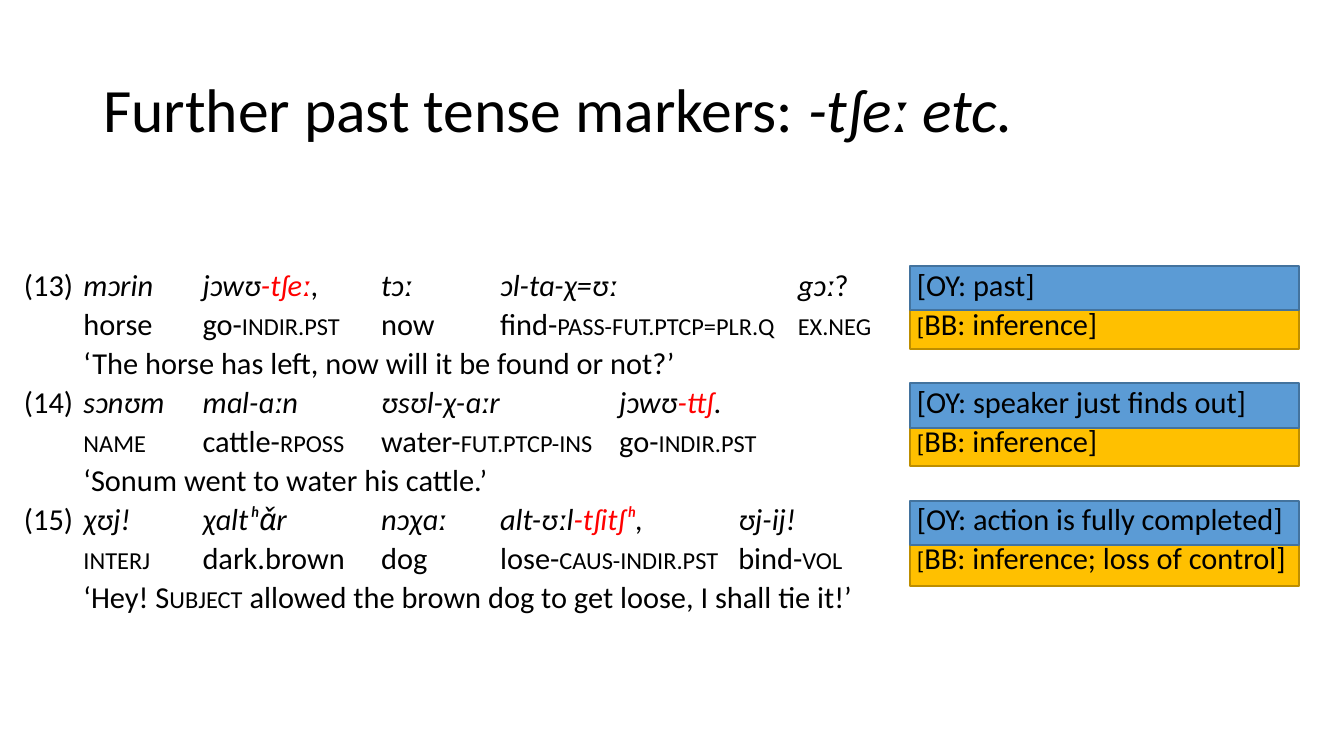
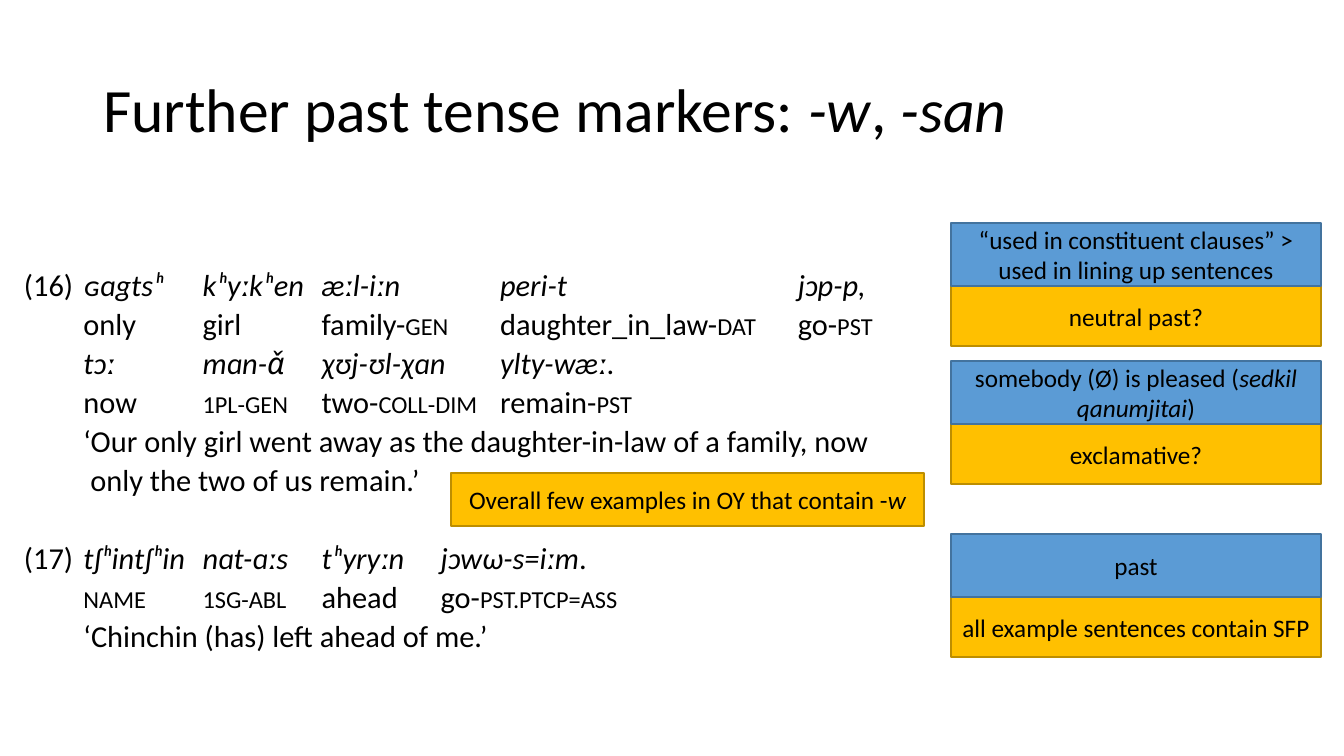
from itertools import groupby

from lxml import etree
from pptx import Presentation
from pptx import util as u
from pptx.dml.color import RGBColor
from pptx.enum import shapes, text
from pptx.oxml import ns

PX = 12192000 / 1344
TAB_STEP = 540000
LINE_PITCH = 28.2
COLORS = {"text": "000000", "marker": "FF0000", "background": "FFFFFF",
          "oy": "5B9BD5", "oy_line": "43739E", "bb": "FFC000", "bb_line": "BD8E00"}
TOGGLES = {"/": "italic", "^": "small", "~": "marker"}
TITLE_BOX = (93, 40, 1159, 146)
TITLE = {"frame": {"vertical_anchor": text.MSO_ANCHOR.MIDDLE, "word_wrap": True},
         "paragraph": {"alignment": text.PP_ALIGN.LEFT, "line_spacing": 0.9},
         "font": {"size": u.Pt(44), "name": "Calibri"}}
EXAMPLE = {"frame": {"vertical_anchor": text.MSO_ANCHOR.TOP, "word_wrap": True},
           "paragraph": {"line_spacing": 0.7, "space_before": u.Pt(9.6)},
           "font": {"size": u.Pt(21.7), "name": "Calibri"}}
NOTE = {"frame": {"vertical_anchor": text.MSO_ANCHOR.MIDDLE, "word_wrap": True},
        "paragraph": {"alignment": text.PP_ALIGN.CENTER},
        "font": {"size": u.Pt(18), "name": "Calibri"}}

PAST_EXAMPLES = [
    {"stops": (1, 3, 6, 8, 13, 15), "lines": [
        "(13)\t/mɔrin\tjɔwʊ~-tʃeː~/,\t/tɔː\tɔl-tɑ-χ=ʊː\tgɔː/?\t[OY: past]",
        "\thorse\tgo-^indir.pst^\tnow\tfind-^pass-fut.ptcp=plr.q\tex.neg\t[^BB: inference]",
        "\t‘The horse has left, now will it be found or not?’"]},
    {"stops": (1, 3, 6, 10, 15), "lines": [
        "(14)\t/sɔnʊm\tmɑl-ɑːn\tʊsʊl-χ-ɑːr\tjɔwʊ~-ttʃ~/.\t[OY: speaker just finds out]",
        "\t^name^\tcattle-^rposs^\twater-^fut.ptcp-ins^\tgo-^indir.pst\t[^BB: inference]",
        "\t‘Sonum went to water his cattle.’"]},
    {"stops": (1, 3, 6, 8, 12, 15), "lines": [
        "(15)\t/χʊj!\tχɑltʰɑ̌r\tnɔχɑː\talt-ʊːl~-tʃitʃʰ~,\tʊj-ij!/\t[OY: action is fully completed]",
        "\t^interj^\tdark.brown\tdog\tlose-^caus-indir.pst^\tbind-^vol\t[^BB: inference; loss of control]",
        "\t‘Hey! ^Subject^ allowed the brown dog to get loose, I shall tie it!’"]},
]
SAN_EXAMPLES = [
    {"stops": (1, 3, 5, 8, 13), "lines": [
        "(16)\t/ɢɑgtsʰ\tkʰyːkʰen\tæːl-iːn\tperi-t\tjɔp-p,/",
        "\tonly\tgirl\tfamily-^gen^\tdaughter_in_law-^dat^\tgo-^pst^",
        "\t/tɔː\tmɑn-ɑ̌\tχʊj-ʊl-χɑn\tylty-wæː/.",
        "\tnow\t^1pl-gen^\ttwo-^coll-dim^\tremain-^pst^",
        "\t‘Our only girl went away as the daughter-in-law of a family, now",
        "\t only the two of us remain.’"]},
    {"stops": (1, 3, 5, 7), "gap": LINE_PITCH, "lines": [
        "(17)\t/tʃʰintʃʰin\tnɑt-ɑːs\ttʰyryːn\tjɔwω-s=iːm/.",
        "\t^name\t1sg-abl^\tahead\tgo-^pst.ptcp=ass^",
        "\t‘Chinchin (has) left ahead of me.’"]},
]
PAST_BANDS = [(266, 44, 39), (383, 45, 38), (501, 44, 41)]
SAN_NOTES = [
    (223, "“used in constituent clauses” > used in lining up sentences", "neutral past?"),
    (361, "somebody (Ø) is pleased (/sedkil qanumjitai/)", "exclamative?"),
    (534, "past", "all example sentences contain SFP"),
]


def px(*lengths):
    return [u.Emu(round(length * PX)) for length in lengths]


def apply_format(target, values):
    for name, value in values.items():
        setattr(target, name, value)


def color(name):
    return RGBColor.from_string(COLORS[name])


def styled_letters(markup):
    active = set()
    for letter in markup:
        if letter in TOGGLES:
            active ^= {TOGGLES[letter]}
        else:
            yield frozenset(active), letter


def write_paragraph(paragraph, markup, style):
    apply_format(paragraph, style["paragraph"])
    for active, letters in groupby(styled_letters(markup), key=lambda pair: pair[0]):
        run = paragraph.add_run()
        run.text = "".join(letter for _, letter in letters)
        apply_format(run.font, style["font"])
        run.font.italic = "italic" in active
        run.font.color.rgb = color("marker" if "marker" in active else "text")
        if "small" in active:
            run._r.get_or_add_rPr().set("cap", "small")


def set_tab_stops(paragraph, stops):
    tab_list = etree.SubElement(paragraph._p.get_or_add_pPr(), ns.qn("a:tabLst"))
    for stop in stops:
        etree.SubElement(tab_list, ns.qn("a:tab"), pos=str(stop * TAB_STEP), algn="l")


def add_titled_slide(presentation, title):
    slide = presentation.slides.add_slide(presentation.slide_layouts[5])
    slide.background.fill.solid()
    slide.background.fill.fore_color.rgb = color("background")
    shape = slide.shapes.title
    apply_format(shape, dict(zip(("left", "top", "width", "height"), px(*TITLE_BOX))))
    apply_format(shape.text_frame, TITLE["frame"])
    write_paragraph(shape.text_frame.paragraphs[0], title, TITLE)
    return slide


def add_examples(slide, box, examples):
    frame = slide.shapes.add_textbox(*px(*box)).text_frame
    apply_format(frame, EXAMPLE["frame"])
    paragraph = frame.paragraphs[0]
    for example in examples:
        for index, line in enumerate(example["lines"]):
            if paragraph is None:
                paragraph = frame.add_paragraph()
            write_paragraph(paragraph, line, EXAMPLE)
            if index == 0 and "gap" in example:
                paragraph.space_before += u.Pt(example["gap"])
            set_tab_stops(paragraph, example["stops"])
            paragraph = None


def add_band(slide, box, kind, markup=""):
    shape = slide.shapes.add_shape(shapes.MSO_SHAPE.FLOWCHART_PROCESS, *px(*box))
    shape.shadow.inherit = False
    shape.fill.solid()
    shape.fill.fore_color.rgb = color(kind)
    shape.line.color.rgb = color(kind + "_line")
    shape.line.width = u.Pt(1)
    if markup:
        apply_format(shape.text_frame, NOTE["frame"])
        write_paragraph(shape.text_frame.paragraphs[0], markup, NOTE)


def add_band_pair(slide, box, bb_height, oy_text="", bb_text=""):
    left, top, width, oy_height = box
    add_band(slide, (left, top + oy_height, width, bb_height), "bb", bb_text)
    add_band(slide, box, "oy", oy_text)


def build_past_slide(presentation):
    slide = add_titled_slide(presentation, "Further past tense markers: /-tʃeː etc./")
    for top, oy_height, bb_height in PAST_BANDS:
        add_band_pair(slide, (910, top, 389, oy_height), bb_height)
    add_examples(slide, (14, 271, 1316, 384), PAST_EXAMPLES)


def build_san_slide(presentation):
    slide = add_titled_slide(presentation, "Further past tense markers: /-w/, /-san/")
    add_examples(slide, (14, 271, 909, 403), SAN_EXAMPLES)
    for top, oy_text, bb_text in SAN_NOTES:
        add_band_pair(slide, (951, top, 370, 63), 60, oy_text, bb_text)
    add_band(slide, (451, 473, 473, 53), "bb", "Overall few examples in OY that contain -/w/")


def main():
    presentation = Presentation()
    presentation.slide_width, presentation.slide_height = px(1344, 756)
    build_past_slide(presentation)
    build_san_slide(presentation)
    presentation.save("out.pptx")


if __name__ == "__main__":
    main()
